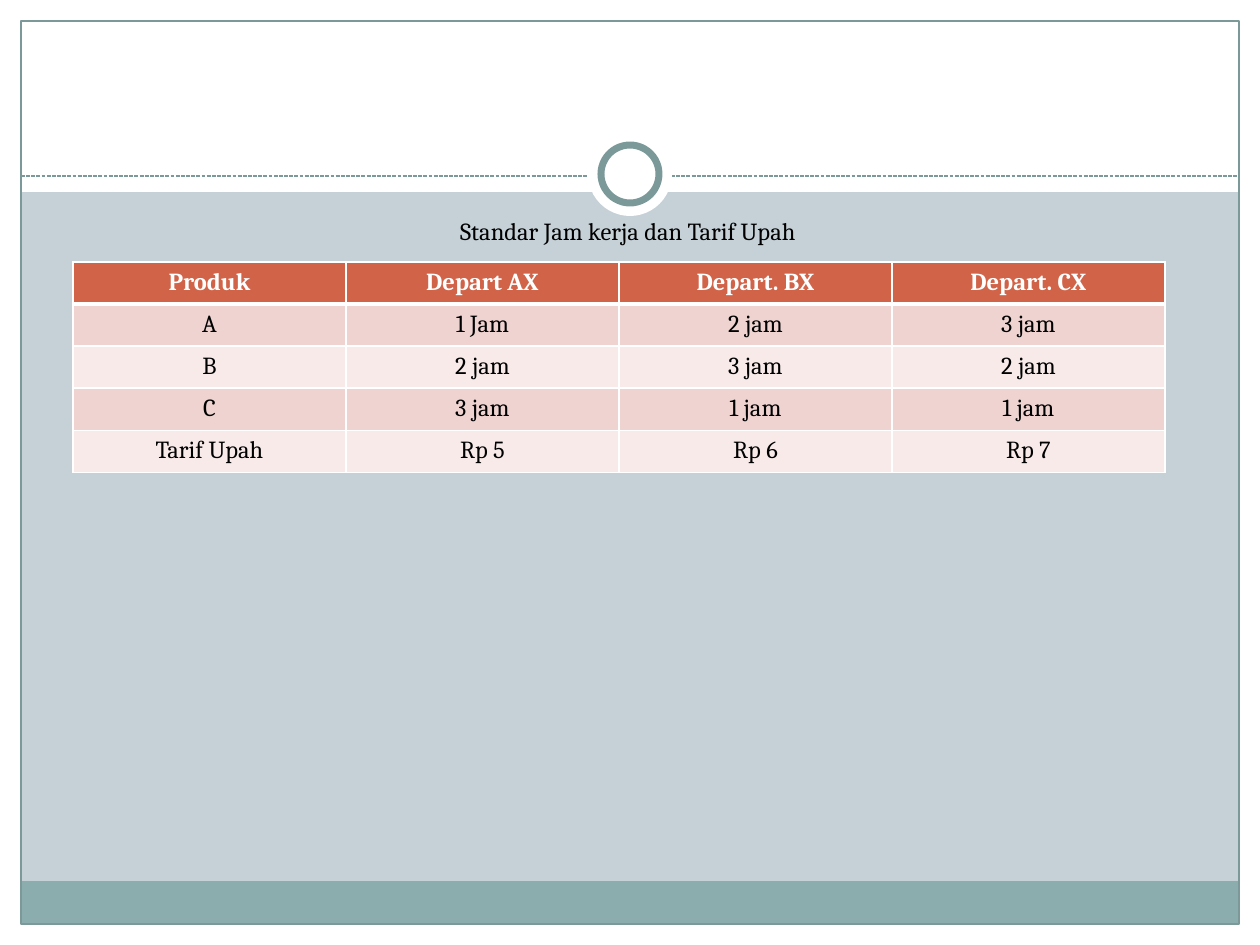
from pptx import Presentation
from pptx.dml.color import RGBColor
from pptx.enum.dml import MSO_LINE_DASH_STYLE as Dash
from pptx.enum.shapes import MSO_CONNECTOR as Connector, MSO_SHAPE as Shape
from pptx.enum.text import MSO_ANCHOR as Anchor, PP_ALIGN as Align
from pptx.oxml import parse_xml
from pptx.oxml.ns import nsdecls, qn
from pptx.util import Emu, Pt

EMU_PER_PX = 914400 / 126
WIDTH, HEIGHT = 1260, 945
MARGIN = 21
WHITE, TEAL, SLATE, BLACK = "FFFFFF", "8CADAE", "7C999A", "000000"
BACKGROUND, HEADER = "C5D1D7", "D16349"
BANDS = ("EED3D0", "F7EAE9")

ROWS = [
    ("Produk", "Depart AX", "Depart. BX", "Depart. CX"),
    ("A", "1 Jam", "2 jam", "3 jam"),
    ("B", "2 jam", "3 jam", "2 jam"),
    ("C", "3 jam", "1 jam", "1 jam"),
    ("Tarif Upah", "Rp 5", "Rp 6", "Rp 7"),
]


def px(length):
    return Emu(round(length * EMU_PER_PX))


def color(value):
    return RGBColor.from_string(value)


def paint(fill, value):
    fill.solid()
    fill.fore_color.rgb = color(value)


def set_borders(cell, widths):
    """Draw white cell borders; widths maps side letters to points."""
    properties = cell._tc.get_or_add_tcPr()
    for index, (side, width) in enumerate(widths.items()):
        properties.insert(index, parse_xml(
            f'<a:ln{side} {nsdecls("a")} w="{Pt(width)}"><a:solidFill>'
            f'<a:srgbClr val="{WHITE}"/></a:solidFill></a:ln{side}>'))


class Slide:
    FONT = {"name": "Cambria", "size": Pt(14)}

    def __init__(self, deck):
        self.page = deck.slides.add_slide(deck.slide_layouts[6])
        paint(self.page.background.fill, BACKGROUND)

    def shape(self, kind, bounds, fill=None, line=None, weight=0.75):
        item = self.page.shapes.add_shape(kind, *map(px, bounds))
        item.shadow.inherit = False
        if fill:
            paint(item.fill, fill)
        else:
            item.fill.background()
        if line:
            paint(item.line.fill, line)
            item.line.width = Pt(weight)
        else:
            item.line.fill.background()

    def circle(self, center_x, center_y, diameter, **style):
        left, top = center_x - diameter / 2, center_y - diameter / 2
        self.shape(Shape.OVAL, (left, top, diameter, diameter), **style)

    def dashed_line(self, start_x, end_x, y, value):
        rule = self.page.shapes.add_connector(
            Connector.STRAIGHT, px(start_x), px(y), px(end_x), px(y))
        paint(rule.line.fill, value)
        for name, setting in {"width": Pt(0.75), "dash_style": Dash.SQUARE_DOT}.items():
            setattr(rule.line, name, setting)
        rule._element.spPr.append(rule._element.makeelement(qn("a:effectLst"), {}))

    def add_span(self, para, text, value, bold=False):
        para.alignment = Align.CENTER
        span = para.add_run()
        span.text = text
        for name, setting in {**self.FONT, "bold": bold}.items():
            setattr(span.font, name, setting)
        span.font.color.rgb = color(value)

    def text(self, bounds, text):
        box = self.page.shapes.add_textbox(*map(px, bounds))
        box.text_frame.word_wrap = True
        para = box.text_frame.paragraphs[0]
        para.space_before = Pt(2.8)
        self.add_span(para, text, BLACK)

    def table(self, left, top, column_width, row_height, rows):
        count = len(rows[0])
        table = self.page.shapes.add_table(
            len(rows), count, px(left), px(top),
            px(column_width * count), px(row_height * len(rows))).table
        for column in table.columns:
            column.width = px(column_width)
        for r, row in enumerate(rows):
            table.rows[r].height = px(row_height)
            for c, text in enumerate(row):
                cell = table.cell(r, c)
                header = r == 0
                paint(cell.fill, HEADER if header else BANDS[(r - 1) % 2])
                set_borders(cell, {"L": 1, "R": 1, "T": 3 if r == 1 else 1,
                                   "B": 3 if header else 1})
                cell.vertical_anchor = Anchor.TOP
                self.add_span(cell.text_frame.paragraphs[0], text,
                              WHITE if header else BLACK, bold=header)


def main():
    deck = Presentation()
    deck.slide_width, deck.slide_height = px(WIDTH), px(HEIGHT)
    slide = Slide(deck)

    inner_width, inner_height = WIDTH - 2 * MARGIN, HEIGHT - 2 * MARGIN
    for bounds in (
        (0, HEIGHT - MARGIN, WIDTH, MARGIN),
        (0, 0, WIDTH, 192),
        (0, 0, MARGIN, HEIGHT),
        (WIDTH - MARGIN, 0, MARGIN, HEIGHT),
    ):
        slide.shape(Shape.RECTANGLE, bounds, fill=WHITE)
    slide.shape(Shape.RECTANGLE, (MARGIN, 881, inner_width, 43), fill=TEAL)
    slide.shape(Shape.RECTANGLE, (MARGIN, MARGIN, inner_width, inner_height), line=SLATE)

    slide.dashed_line(MARGIN, WIDTH - MARGIN, 176, SLATE)
    slide.circle(WIDTH / 2, 174, 84, fill=WHITE)
    slide.circle(WIDTH / 2, 174, 58, fill=WHITE, line=SLATE, weight=4)

    slide.text((42, 210, 1172, 630), "Standar Jam kerja dan Tarif Upah")
    slide.table(73, 262, 273, 41, ROWS)
    deck.save("out.pptx")


if __name__ == "__main__":
    main()
